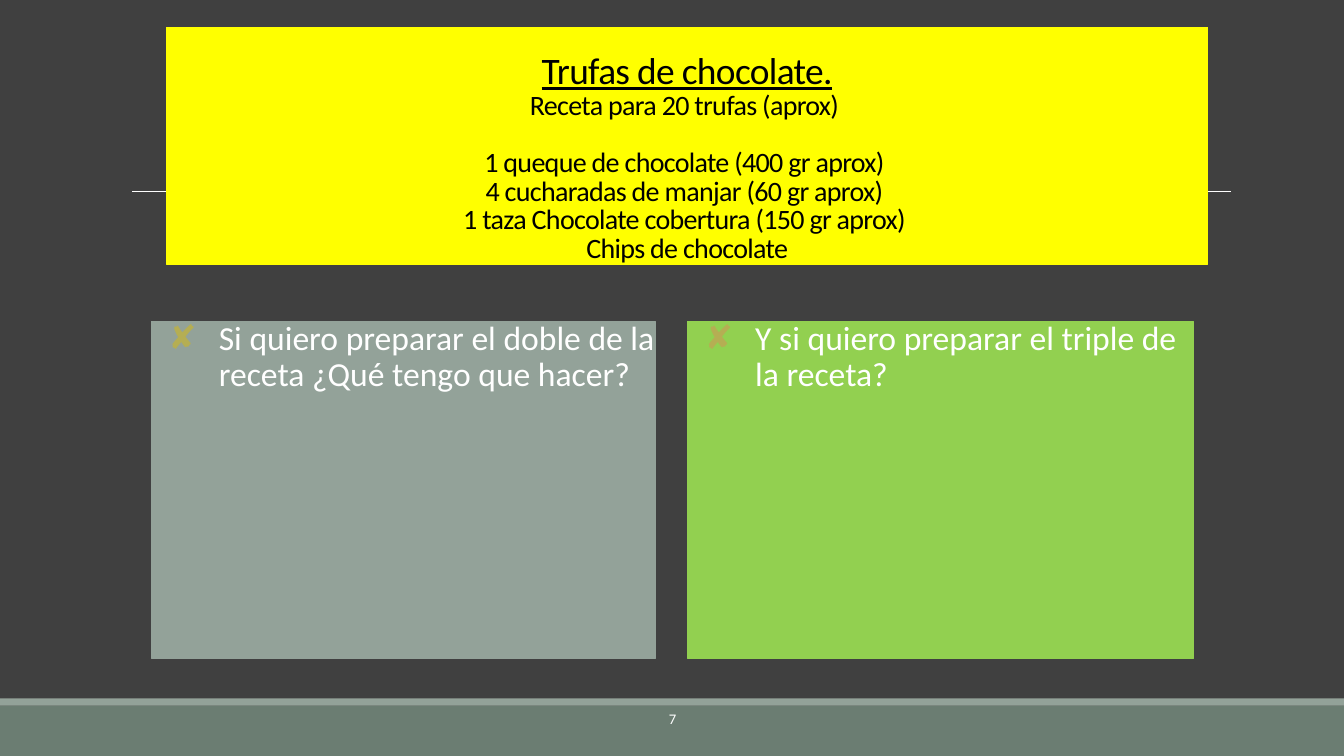
"""Build the truffle recipe slide with its two questions."""
from dataclasses import dataclass, field
from typing import Any

from lxml.etree import SubElement as Sub
from pptx import Presentation
from pptx.dml.color import RGBColor as Rgb
from pptx.enum.shapes import MSO_CONNECTOR as Link, MSO_SHAPE as Form
from pptx.enum.text import MSO_ANCHOR as Anchor, MSO_AUTO_SIZE as Auto, PP_ALIGN as Align
from pptx.oxml.ns import qn
from pptx.util import Inches, Pt

HUES = {"back": "404040", "base": "6B7D72", "sage": "93A299", "sun": "FFFF00",
        "lime": "92D050", "gold": "B5AE53", "ink": "000000", "white": "FFFFFF"}
FRAME = {"margin_left": 0, "margin_right": 0, "margin_top": 0, "margin_bottom": 0,
         "word_wrap": True, "auto_size": Auto.NONE}
HEAD = {"alignment": Align.CENTER, "line_spacing": 0.85, "space_before": Pt(0)}
ITEM = {"alignment": Align.LEFT, "line_spacing": 0.9, "space_before": Pt(8)}
MID = {"alignment": Align.CENTER}


@dataclass
class Line:
    """One paragraph of text and its format."""
    text: str
    size: float
    hue: str
    form: dict[str, Any]
    under: bool = False
    track: int = 0
    mark: str = ""


@dataclass
class Box:
    """A block with its place, fill and text."""
    at: tuple[float, float, float, float]
    fill: str = ""
    lines: list[Line] = field(default_factory=list)
    anchor: Anchor = Anchor.TOP


def put(obj: Any, form: dict[str, Any]) -> None:
    """Set every attribute in the format dict."""
    for name, val in form.items():
        setattr(obj, name, val)


def rgb(hue: str) -> Rgb:
    """Return the named colour."""
    return Rgb.from_string(HUES[hue])


def bullet(para: Any, mark: str) -> None:
    """Give a paragraph a gold hanging bullet."""
    props = para._p.get_or_add_pPr()
    props.set("marL", str(Inches(0.67)))
    props.set("indent", str(Inches(-0.5)))
    Sub(Sub(props, qn("a:buClr")), qn("a:srgbClr"), val=HUES["gold"])
    Sub(props, qn("a:buFont"), typeface="Calibri")
    Sub(props, qn("a:buChar"), char=mark)


def write(frame: Any, box: Box) -> None:
    """Fill a text frame with the lines of a box."""
    put(frame, FRAME | {"vertical_anchor": box.anchor})
    for num, line in enumerate(box.lines):
        para = frame.add_paragraph() if num else frame.paragraphs[0]
        put(para, line.form)
        run = para.add_run()
        run.text = line.text
        put(run.font, {"name": "Calibri", "size": Pt(line.size), "underline": line.under})
        run.font.color.rgb = rgb(line.hue)
        if line.track:
            run._r.get_or_add_rPr().set("spc", str(line.track))
        if line.mark:
            bullet(para, line.mark)


def place(shape: Any, box: Box) -> None:
    """Move a placeholder to the front and format it."""
    shape.element.getparent().append(shape.element)
    put(shape, dict(zip(("left", "top", "width", "height"), map(Inches, box.at))))
    shape.fill.solid()
    shape.fill.fore_color.rgb = rgb(box.fill)
    shape.line.color.rgb = rgb(box.fill)
    shape.line.width = Pt(0.75)
    write(shape.text_frame, box)


def band(shapes: Any, box: Box) -> None:
    """Draw a plain footer band."""
    shape = shapes.add_shape(Form.RECTANGLE, *map(Inches, box.at))
    shape.shadow.inherit = False
    shape.fill.solid()
    shape.fill.fore_color.rgb = rgb(box.fill)
    shape.line.fill.background()


def rule(shapes: Any) -> None:
    """Draw the thin line behind the title."""
    line = shapes.add_connector(Link.STRAIGHT, *map(Inches, (1.31, 1.9, 12.21, 1.9)))
    line.line.color.rgb = rgb("white")
    line.line.width = Pt(0.5)
    Sub(line.element.spPr, qn("a:effectLst"))


def ask(text: str) -> list[Line]:
    """Return a question as a bulleted line."""
    return [Line(text, 24, "white", ITEM, mark="✘")]


FOOD = ["1 queque de chocolate (400 gr aprox) ", "4 cucharadas de manjar (60 gr aprox) ",
        "1 taza Chocolate cobertura (150 gr aprox) ", "Chips de chocolate"]
TITLE = Box((1.65, 0.27, 10.33, 2.35), "sun", [
    Line("Trufas de chocolate.", 26.7, "ink", HEAD, under=True, track=-50),
    Line("Receta para 20 trufas (aprox) ", 20, "ink", HEAD, track=-50),
    *(Line(text, 20, "ink", HEAD | {"space_before": Pt(0 if num else 20.7)}, track=-50)
      for num, text in enumerate(FOOD))], Anchor.BOTTOM)
ASKS = [Box((1.5, 3.19, 5, 3.34), "sage",
            ask("Si quiero preparar el doble de la receta ¿Qué tengo que hacer?")),
        Box((6.82, 3.19, 5.02, 3.34), "lime",
            ask("Y si quiero preparar el triple de la receta?"))]
BANDS = [Box((0, 7, 13.33, 0.5), "base"), Box((0, 6.93, 13.33, 0.07), "sage")]
PAGE = Box((6.27, 6.93, 0.8, 0.4), lines=[Line("7", 10.5, "white", MID)],
           anchor=Anchor.MIDDLE)


def main() -> None:
    """Build and save the deck."""
    deck = Presentation()
    put(deck, {"slide_width": Inches(13.33), "slide_height": Inches(7.5)})
    slide = deck.slides.add_slide(deck.slide_layouts[3])
    slide.background.fill.solid()
    slide.background.fill.fore_color.rgb = rgb("back")
    shapes = slide.shapes
    for box in BANDS:
        band(shapes, box)
    rule(shapes)
    for shape, box in zip(list(slide.placeholders), [TITLE, *ASKS]):
        place(shape, box)
    write(shapes.add_textbox(*map(Inches, PAGE.at)).text_frame, PAGE)
    deck.save("out.pptx")


if __name__ == "__main__":
    main()
